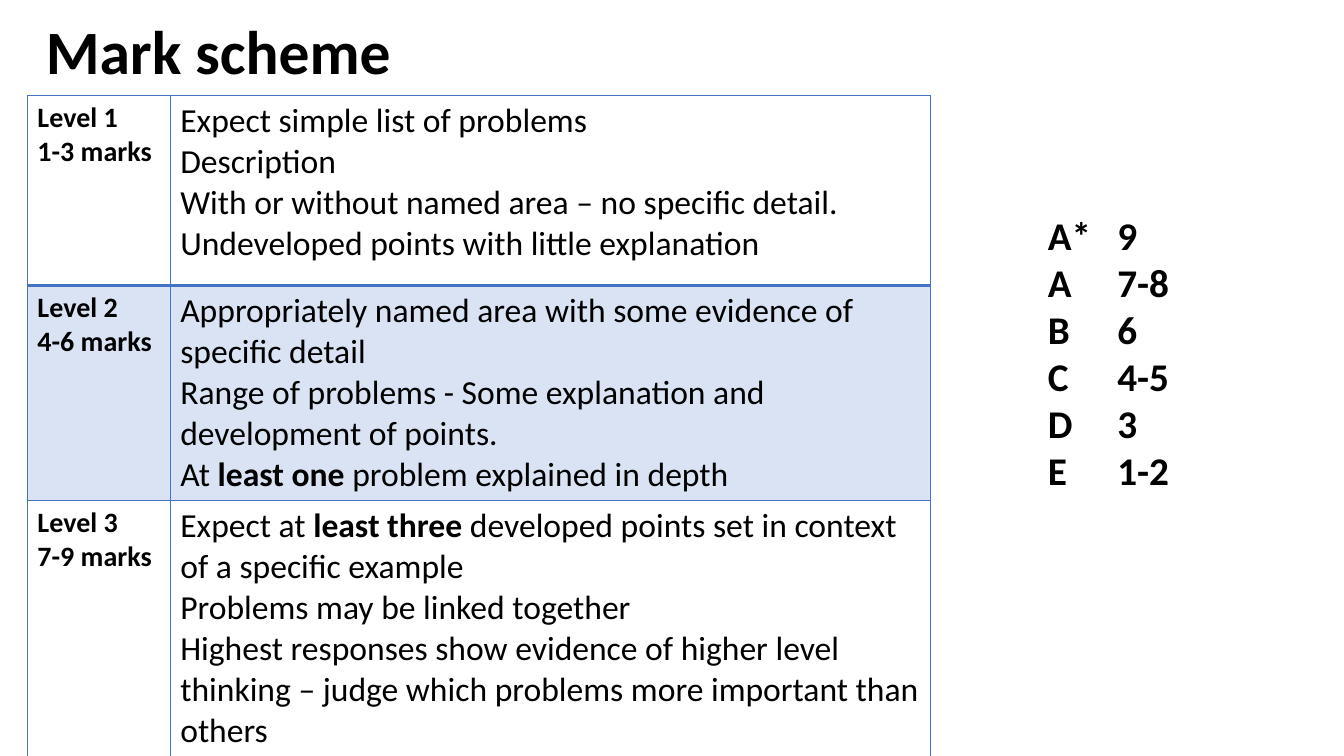
from lxml.etree import SubElement
from pptx import Presentation
from pptx.dml.color import RGBColor
from pptx.enum.text import MSO_ANCHOR as Anchor, MSO_AUTO_SIZE as AutoSize, PP_ALIGN as Align
from pptx.oxml.ns import qn
from pptx.util import Cm, Pt

BLACK = RGBColor(0x00, 0x00, 0x00)
BORDER_BLUE = RGBColor(0x44, 0x72, 0xC4)
BAND_BLUE = RGBColor(0xDA, 0xE3, 0xF3)
FONT = "Calibri"
BOLD_MARK = "**"

# Each level: its label lines, then its criteria
LEVELS = [
    (["Level 1", "1-3 marks"],
     ["Expect simple list of problems",
      "Description",
      "With or without named area – no specific detail.",
      "Undeveloped points with little explanation"]),
    (["Level 2", "4-6 marks"],
     ["Appropriately named area with some evidence of specific detail",
      "Range of problems - Some explanation and development of points.",
      "At **least one **problem explained in depth"]),
    (["Level 3", "7-9 marks"],
     ["Expect at **least three **developed points set in context of a specific example",
      "Problems may be linked together",
      "Highest responses show evidence of higher level thinking – "
      "judge which problems more important than others"]),
]
GRADES = [("A*", "9"), ("A", "7-8"), ("B", "6"), ("C", "4-5"), ("D", "3"), ("E", "1-2")]


def format_run(run, size, bold):
    run.font.name = FONT
    run.font.size = Pt(size)
    run.font.bold = bold
    run.font.color.rgb = BLACK


def fill_text(frame, lines, size, bold=False):
    """Write one paragraph per line; marked words switch to bold."""
    frame.text = "\n".join(lines)
    for paragraph, line in zip(frame.paragraphs, lines):
        pieces = line.split(BOLD_MARK)
        paragraph.text = pieces[0]
        for piece in pieces[1:]:
            paragraph.add_run().text = piece
        for index, run in enumerate(paragraph.runs):
            format_run(run, size, bold or index % 2 == 1)


def set_borders(cell, widths):
    properties = cell._tc.get_or_add_tcPr()
    for side, width in zip(("a:lnL", "a:lnR", "a:lnT", "a:lnB"), widths):
        edge = SubElement(properties, qn(side), w=str(Pt(width)))
        solid = SubElement(edge, qn("a:solidFill"))
        SubElement(solid, qn("a:srgbClr"), val=str(BORDER_BLUE))


def place_title(slide, left, top, width, height):
    title = slide.shapes.title
    title.left, title.top, title.width, title.height = left, top, width, height
    frame = title.text_frame
    frame.auto_size = AutoSize.NONE
    frame.vertical_anchor = Anchor.MIDDLE
    fill_text(frame, ["Mark scheme"], 44, bold=True)
    frame.paragraphs[0].alignment = Align.LEFT
    frame.paragraphs[0].line_spacing = 0.9


def place_levels(slide, left, top, width, height):
    table = slide.shapes.add_table(len(LEVELS), 2, left, top, width, height).table
    label_width = Cm(3.6)
    table.columns[0].width = label_width
    table.columns[1].width = width - label_width
    for row, row_height in zip(table.rows, (4.78, 5.08, 6.2)):
        row.height = Cm(row_height)

    for index, (label, criteria) in enumerate(LEVELS):
        top_width = 2 if index == 1 else 1
        bottom_width = 2 if index == 0 else 1
        for cell, lines, size, bold in zip(table.rows[index].cells, (label, criteria),
                                           (20, 24), (True, False)):
            fill_text(cell.text_frame, lines, size, bold)
            set_borders(cell, (1, 1, top_width, bottom_width))
            if index % 2:
                cell.fill.solid()
                cell.fill.fore_color.rgb = BAND_BLUE
            else:
                cell.fill.background()


def place_grades(slide, left, top, width, height):
    frame = slide.shapes.add_textbox(left, top, width, height).text_frame
    frame.word_wrap = True
    fill_text(frame, [f"{grade}\t{marks}" for grade, marks in GRADES], 28, bold=True)
    # Marks line up at one tab stop
    for paragraph in frame.paragraphs:
        tabs = SubElement(paragraph._p.get_or_add_pPr(), qn("a:tabLst"))
        SubElement(tabs, qn("a:tab"), pos=str(Cm(1.75)), algn="l")


def main():
    deck = Presentation()
    deck.slide_width, deck.slide_height = Cm(33.87), Cm(19.05)
    slide = deck.slides.add_slide(deck.slide_layouts[5])
    place_title(slide, Cm(0.9), Cm(-0.46), Cm(29.2), Cm(3.68))
    place_levels(slide, Cm(0.69), Cm(2.41), Cm(22.76), Cm(16.06))
    place_grades(slide, Cm(26.16), Cm(5.2), Cm(5.87), Cm(8.2))
    deck.save("out.pptx")


if __name__ == "__main__":
    main()
